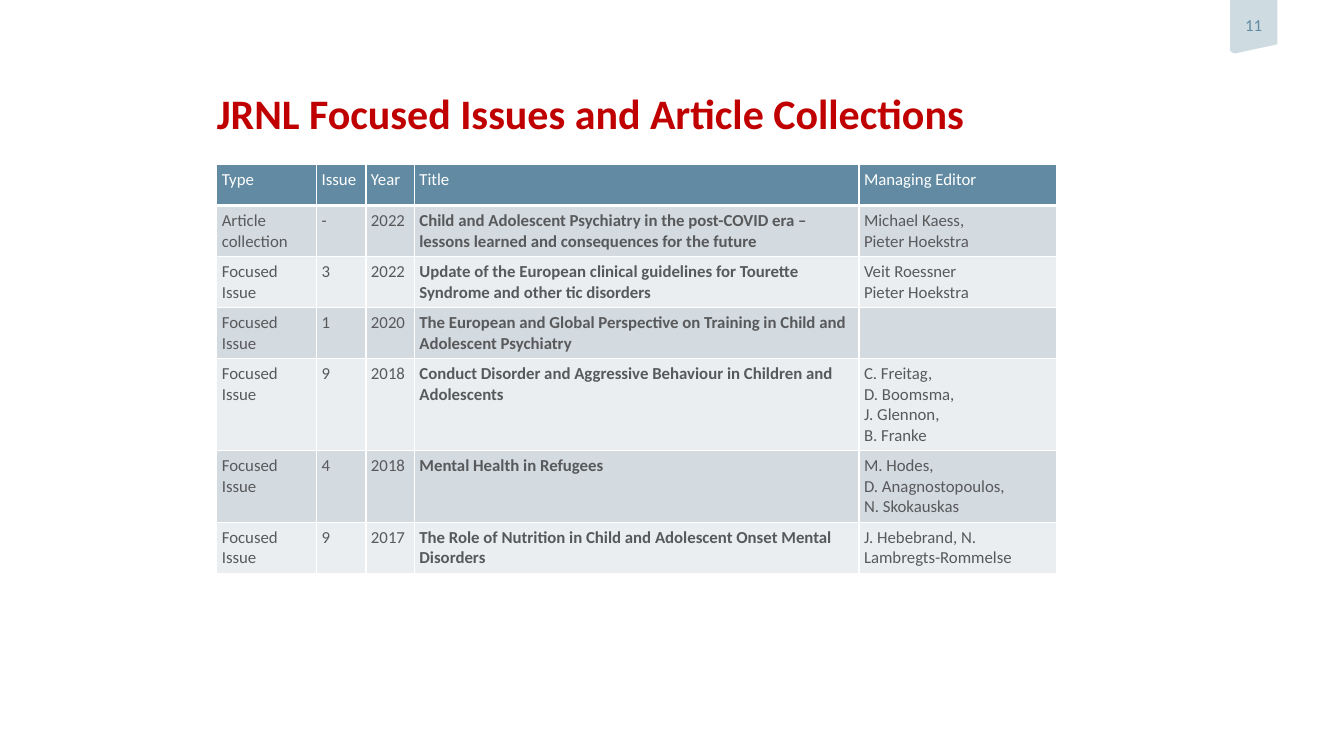
from lxml import etree
from pptx import Presentation
from pptx.dml.color import RGBColor
from pptx.enum.text import MSO_ANCHOR, PP_ALIGN
from pptx.oxml.ns import qn
from pptx.util import Pt

PX = 9144
TOP, MIDDLE = MSO_ANCHOR.TOP, MSO_ANCHOR.MIDDLE
LEFT, CENTER = PP_ALIGN.LEFT, PP_ALIGN.CENTER
WHITE, BLUE, PALE_BLUE = "FFFFFF", "628BA3", "CEDBE0"
RED, GREY, BANDS = "C00000", "58595B", ("D3DAE0", "EAEEF0")

HEADINGS = ("Type", "Issue", "Year", "Title", "Managing Editor")
COLUMN_WIDTHS = (99, 49, 48, 441, 196)
ROW_HEIGHT = 41
COLLECTIONS = (
    ("Article collection", "-", "2022",
     "Child and Adolescent Psychiatry in the post-COVID era –lessons learned and consequences for the future",
     "Michael Kaess,\nPieter Hoekstra"),
    ("Focused Issue", "3", "2022",
     "Update of the European clinical guidelines for Tourette Syndrome and other tic disorders",
     "Veit Roessner\vPieter Hoekstra"),
    ("Focused Issue", "1", "2020",
     "The European and Global Perspective on Training in Child and Adolescent Psychiatry", ""),
    ("Focused Issue", "9", "2018",
     "Conduct Disorder and Aggressive Behaviour in Children and Adolescents",
     "C. Freitag,\vD. Boomsma,\vJ. Glennon,\vB. Franke"),
    ("Focused Issue", "4", "2018", "Mental Health in Refugees",
     "M. Hodes,\vD. Anagnostopoulos,\vN. Skokauskas"),
    ("Focused Issue", "9", "2017",
     "The Role of Nutrition in Child and Adolescent Onset Mental Disorders",
     "J. Hebebrand, N. Lambregts-Rommelse"),
)
BADGE_OUTLINE = ((1220, 0), (1267, 0), (1267, 44), (1225, 53), (1224, 53), (1222, 52), (1220, 50))


def px(length):
    return length * PX


def paint(fill, color):
    fill.solid()
    fill.fore_color.rgb = RGBColor.from_string(color)


def write(frame, text, size=12, color=GREY, bold=False, align=LEFT, font="Calibri"):
    frame.text = text
    for paragraph in frame.paragraphs:
        paragraph.alignment = align
        paragraph.font.name = font
        paragraph.font.size = Pt(size)
        paragraph.font.bold = bold
        paragraph.font.color.rgb = RGBColor.from_string(color)


def set_insets(holder, left, top, right, bottom):
    holder.margin_left, holder.margin_top = px(left), px(top)
    holder.margin_right, holder.margin_bottom = px(right), px(bottom)


def set_borders(cell, color, **widths):
    properties = cell._tc.get_or_add_tcPr()
    for side, width in widths.items():
        line = etree.SubElement(properties, qn(f"a:ln{side}"), w=str(Pt(width)))
        solid = etree.SubElement(line, qn("a:solidFill"))
        etree.SubElement(solid, qn("a:srgbClr"), val=color)


class SlideBuilder:
    def __init__(self, slide):
        self.shapes = slide.shapes

    def title(self, text, left, top, width, height):
        frame = self.shapes.add_textbox(px(left), px(top), px(width), px(height)).text_frame
        frame.word_wrap = True
        frame.vertical_anchor = TOP
        set_insets(frame, 0, 0, 0, 0)
        write(frame, text, size=30, color=RED, bold=True)

    def page_badge(self, number, outline):
        start, *corners = outline
        builder = self.shapes.build_freeform(*start, scale=PX)
        builder.add_line_segments(corners, close=True)
        badge = builder.convert_to_shape()
        badge.shadow.inherit = False
        paint(badge.fill, PALE_BLUE)
        badge.line.fill.background()
        frame = badge.text_frame
        frame.word_wrap = False
        frame.vertical_anchor = MIDDLE
        set_insets(frame, 0, 0, 0, 4)
        write(frame, number, color=BLUE, align=CENTER)

    def cell(self, cell, text, fill, bottom_border, **style):
        set_insets(cell, 5, 5, 5, 5)
        set_borders(cell, WHITE, L=1, R=1, T=1, B=bottom_border)
        paint(cell.fill, fill)
        write(cell.text_frame, text, **style)

    def table(self, headings, records, left, top, widths, row_height):
        row_count = len(records) + 1
        table = self.shapes.add_table(
            row_count, len(headings), px(left), px(top),
            px(sum(widths)), px(row_height * row_count)).table
        for column, width in zip(table.columns, widths):
            column.width = px(width)
        for column, heading in enumerate(headings):
            self.cell(table.cell(0, column), heading, BLUE, 3, color=WHITE)
        for row, record in enumerate(records, 1):
            for column, text in enumerate(record):
                self.cell(table.cell(row, column), text, BANDS[(row - 1) % 2], 1,
                          bold=headings[column] == "Title")


def main():
    deck = Presentation()
    deck.slide_width, deck.slide_height = px(1333), px(750)
    page = SlideBuilder(deck.slides.add_slide(deck.slide_layouts[6]))
    page.page_badge("11", BADGE_OUTLINE)
    page.table(HEADINGS, COLLECTIONS, 215, 163, COLUMN_WIDTHS, ROW_HEIGHT)
    page.title("JRNL Focused Issues and Article Collections", 215, 87, 901, 41)
    deck.save("out.pptx")


if __name__ == "__main__":
    main()
